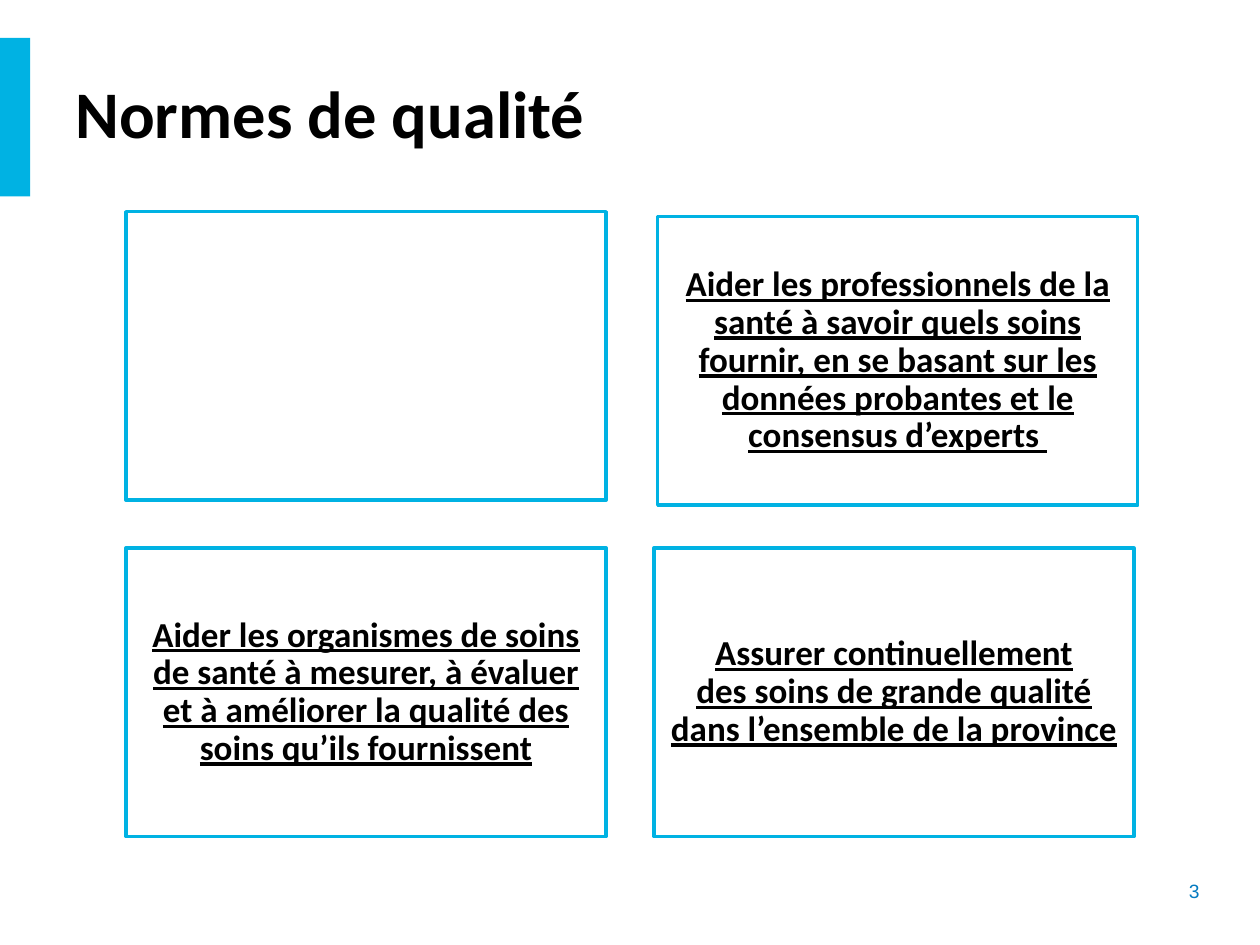
from dataclasses import dataclass

from pptx import Presentation
from pptx.dml.color import RGBColor
from pptx.enum.shapes import MSO_SHAPE
from pptx.enum.text import MSO_ANCHOR, PP_ALIGN
from pptx.shapes.autoshape import Shape
from pptx.slide import Slide
from pptx.util import Inches, Pt

COLUMNS, ROWS = 100, 75
CELL = Inches(0.1)


@dataclass(frozen=True)
class Theme:
    accent: RGBColor = RGBColor(0x00, 0xB2, 0xE3)
    page_number: RGBColor = RGBColor(0x04, 0x7B, 0xC1)
    text: RGBColor = RGBColor(0x00, 0x00, 0x00)
    card: RGBColor = RGBColor(0xFF, 0xFF, 0xFF)
    title_size: int = 38
    card_size: int = 20
    number_size: int = 11
    outline: int = 2
    font: str = "Calibri"
    number_font: str = "Arial"


@dataclass(frozen=True)
class Area:
    column: float
    row: float
    columns: float
    rows: float

    def lengths(self) -> tuple[int, ...]:
        return tuple(round(value * CELL) for value in
                     (self.column, self.row, self.columns, self.rows))


@dataclass(frozen=True)
class Card:
    column: float
    row: float
    text: str = ""


THEME = Theme()
CARD_COLUMNS, CARD_ROWS, CARD_INSET = 38.1, 22.9, 0.8
CARDS = (
    Card(10, 16.8),
    Card(52.2, 17.2, "Aider les professionnels de la santé à savoir quels soins fournir, "
         "en se basant sur les données probantes et le consensus d’experts "),
    Card(10, 43.5, "Aider les organismes de soins de santé à mesurer, à évaluer "
         "et à améliorer la qualité des soins qu’ils fournissent"),
    Card(51.9, 43.5, "Assurer continuellement\vdes soins de grande qualité "
         "dans l’ensemble de la province"),
)


def write_text(shape: Shape, text: str, *, size: int, color: RGBColor = THEME.text,
               font: str = THEME.font, bold: bool = False, underline: bool = False,
               align: PP_ALIGN = PP_ALIGN.LEFT, anchor: MSO_ANCHOR = MSO_ANCHOR.MIDDLE,
               line_spacing: float = 1.0) -> None:
    frame = shape.text_frame
    frame.word_wrap = True
    frame.vertical_anchor = anchor
    paragraph = frame.paragraphs[0]
    paragraph.text = text
    paragraph.alignment = align
    paragraph.line_spacing = line_spacing
    for run in paragraph.runs:
        run.font.name = font
        run.font.size = Pt(size)
        run.font.bold = bold
        run.font.underline = underline
        run.font.color.rgb = color


def draw_rectangle(slide: Slide, area: Area, fill: RGBColor) -> Shape:
    shape = slide.shapes.add_shape(MSO_SHAPE.RECTANGLE, *area.lengths())
    shape.shadow.inherit = False
    shape.fill.solid()
    shape.fill.fore_color.rgb = fill
    shape.line.fill.background()
    return shape


def draw_card(slide: Slide, card: Card) -> None:
    area = Area(card.column, card.row, CARD_COLUMNS, CARD_ROWS)
    shape = draw_rectangle(slide, area, THEME.card)
    shape.line.color.rgb = THEME.accent
    shape.line.width = Pt(THEME.outline)
    if card.text:
        frame = shape.text_frame
        inset = round(CARD_INSET * CELL)
        frame.margin_left = frame.margin_right = inset
        frame.margin_top = frame.margin_bottom = inset
        write_text(shape, card.text, size=THEME.card_size, bold=True, underline=True,
                   align=PP_ALIGN.CENTER, line_spacing=0.9)


def main() -> None:
    presentation = Presentation()
    presentation.slide_width = COLUMNS * CELL
    presentation.slide_height = ROWS * CELL
    slide = presentation.slides.add_slide(presentation.slide_layouts[6])

    page_number = slide.shapes.add_textbox(*Area(84.5, 69.3, 11.7, 2.9).lengths())
    write_text(page_number, "3", size=THEME.number_size, color=THEME.page_number,
               font=THEME.number_font, align=PP_ALIGN.RIGHT, anchor=MSO_ANCHOR.TOP)
    draw_rectangle(slide, Area(0, 3, 2.4, 12.6), THEME.accent)
    title = slide.shapes.add_textbox(*Area(5, 5, 78.1, 7.7).lengths())
    write_text(title, "Normes de qualité", size=THEME.title_size, bold=True)
    for card in CARDS:
        draw_card(slide, card)

    presentation.save("out.pptx")


if __name__ == "__main__":
    main()
